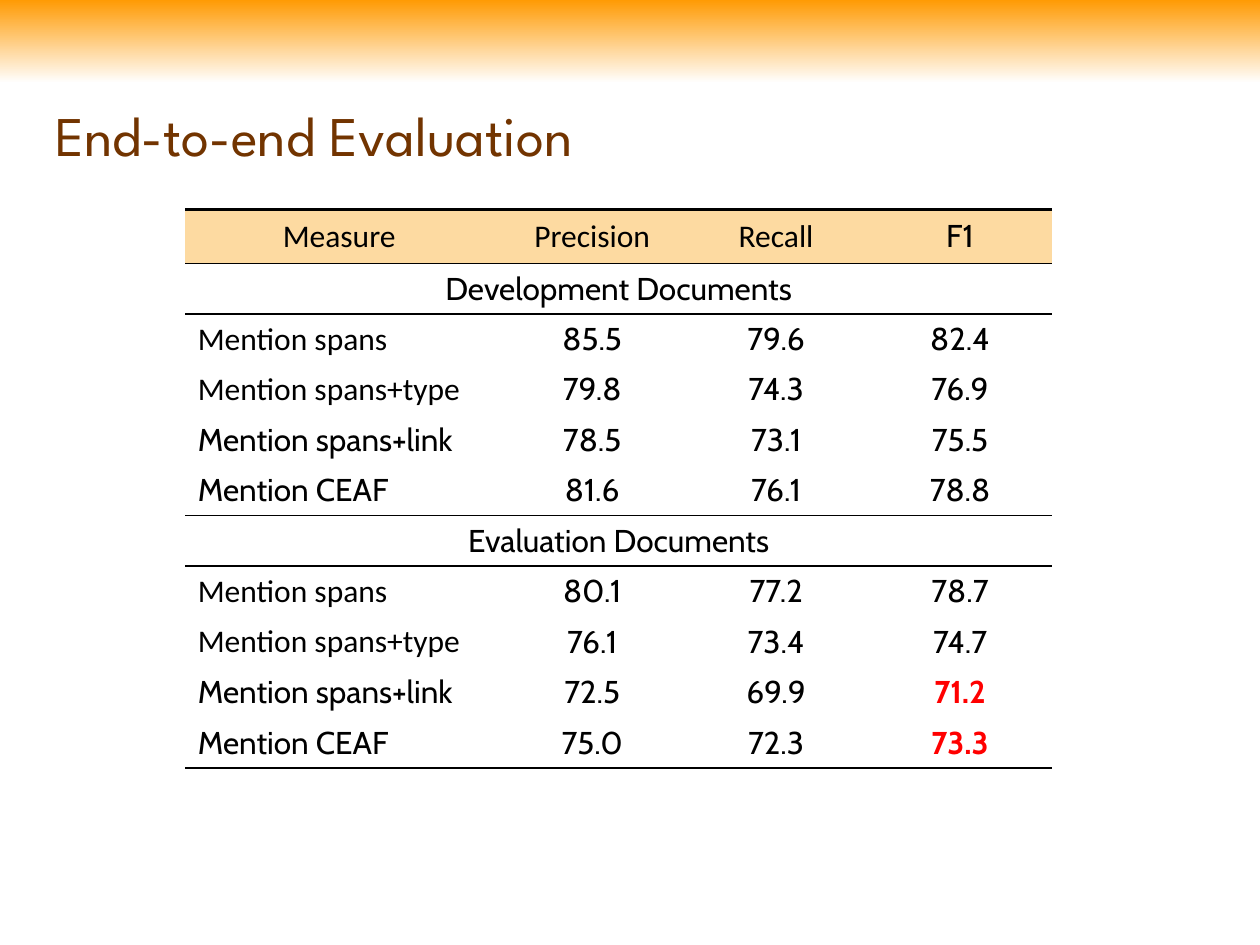
import pptx
import pptx.util
import pptx.dml.color
import pptx.enum.shapes
import pptx.enum.text
import pptx.oxml

Inch, Pt = pptx.util.Inches, pptx.util.Pt
Color = pptx.dml.color.RGBColor.from_string
Align, Anchor = pptx.enum.text.PP_ALIGN, pptx.enum.text.MSO_ANCHOR

THEME = {
    "band": "FF9900", "paper": "FFFFFF", "title": "723400",
    "head": "FDDAA1", "ink": "000000", "hot": "FF0000",
    "title_font": "League Spartan", "font": "Cabin", "alt": "Calibri",
    "title_size": 32, "size": 18,
}

TITLE = "End-to-end Evaluation"
HEAD = ["Measure ", "Precision", "Recall", "F1"]
NAMES = ["Mention spans", "Mention spans+type", "Mention spans+link", "Mention CEAF"]
PARTS = [
    ("Development Documents", [
        ("85.5", "79.6", "82.4"), ("79.8", "74.3", "76.9"),
        ("78.5", "73.1", "75.5"), ("81.6", "76.1", "78.8")]),
    ("Evaluation Documents", [
        ("80.1", "77.2", "78.7"), ("76.1", "73.4", "74.7"),
        ("72.5", "69.9", "71.2"), ("75.0", "72.3", "73.3")]),
]
ALT = set(HEAD[:3] + NAMES[:2])
HOT = {"71.2", "73.3"}
WIDTHS = [2.5, 1.46, 1.46, 1.46]
HEAD_H, ROW_H = 0.43, 0.38
LEFT, TOP, TALL = 1.47, 1.66, 4.43


def write(frame, text, font, size, color, bold=False, align=Align.LEFT):
    para = frame.paragraphs[0]
    para.alignment = align
    run = para.add_run()
    run.text = text
    run.font.name, run.font.size, run.font.bold = font, Pt(size), bold
    run.font.color.rgb = Color(color)


def rule(cell, top, bottom):
    """Set cell borders in points; 0 means none."""
    props = cell._tc.get_or_add_tcPr()
    sides = [("lnL", 0), ("lnR", 0), ("lnT", top), ("lnB", bottom)]
    for place, (side, width) in enumerate(sides):
        fill = (f'<a:solidFill><a:srgbClr val="{THEME["ink"]}"/></a:solidFill>'
                if width else "<a:noFill/>")
        props.insert(place, pptx.oxml.parse_xml(
            f'<a:{side} xmlns:a="http://schemas.openxmlformats.org/drawingml/2006/main" '
            f'w="{Pt(width)}">{fill}</a:{side}>'))


def add_band(slide):
    band = slide.shapes.add_shape(pptx.enum.shapes.MSO_SHAPE.RECTANGLE,
                                  0, Inch(-0.01), Inch(10), Inch(0.67))
    band.shadow.inherit = False
    band.line.fill.background()
    band.fill.gradient()
    band.fill.gradient_angle = 270
    for stop, name, spot in zip(band.fill.gradient_stops, ("band", "paper"), (0, 1)):
        stop.color.rgb = Color(THEME[name])
        stop.position = spot


def add_title(slide):
    box = slide.shapes.add_textbox(Inch(0.34), Inch(0.65), Inch(9.32), Inch(0.83))
    frame = box.text_frame
    frame.word_wrap = True
    frame.vertical_anchor = Anchor.MIDDLE
    frame.margin_left = frame.margin_right = Inch(0.1)
    frame.margin_top = frame.margin_bottom = Inch(0.1)
    write(frame, TITLE, THEME["title_font"], THEME["title_size"], THEME["title"])


def add_scores(slide):
    rows = [HEAD]
    for part, scores in PARTS:
        rows.append([part])
        rows += [[name, *score] for name, score in zip(NAMES, scores)]
    # Line widths above each row, then below the last one
    lines = [2] + [1 if len(row) == 1 or len(last) == 1 else 0
                   for last, row in zip(rows, rows[1:])] + [1]

    holder = slide.shapes.add_table(len(rows), len(HEAD), Inch(LEFT), Inch(TOP),
                                    Inch(sum(WIDTHS)), Inch(TALL))
    table = holder.table
    table.first_row = table.horz_banding = False
    for col, width in zip(table.columns, WIDTHS):
        col.width = Inch(width)
    for r, row in enumerate(rows):
        table.rows[r].height = Inch(ROW_H if r else HEAD_H)
        for c in range(len(HEAD)):
            cell = table.cell(r, c)
            cell.fill.solid()
            cell.fill.fore_color.rgb = Color(THEME["paper" if r else "head"])
            rule(cell, lines[r], lines[r + 1])
        if len(row) == 1:
            table.cell(r, 0).merge(table.cell(r, len(HEAD) - 1))
        for c, text in enumerate(row):
            cell = table.cell(r, c)
            cell.vertical_anchor = Anchor.TOP if r else Anchor.MIDDLE
            hot = text in HOT
            write(cell.text_frame, text, THEME["alt" if text in ALT else "font"],
                  THEME["size"], THEME["hot" if hot else "ink"], hot,
                  Align.LEFT if text in NAMES else Align.CENTER)
    holder.height = Inch(TALL)


def main():
    deck = pptx.Presentation()
    deck.slide_width, deck.slide_height = Inch(10), Inch(7.5)
    slide = deck.slides.add_slide(deck.slide_layouts[6])
    add_band(slide)
    add_title(slide)
    add_scores(slide)
    deck.save("out.pptx")


if __name__ == "__main__":
    main()
